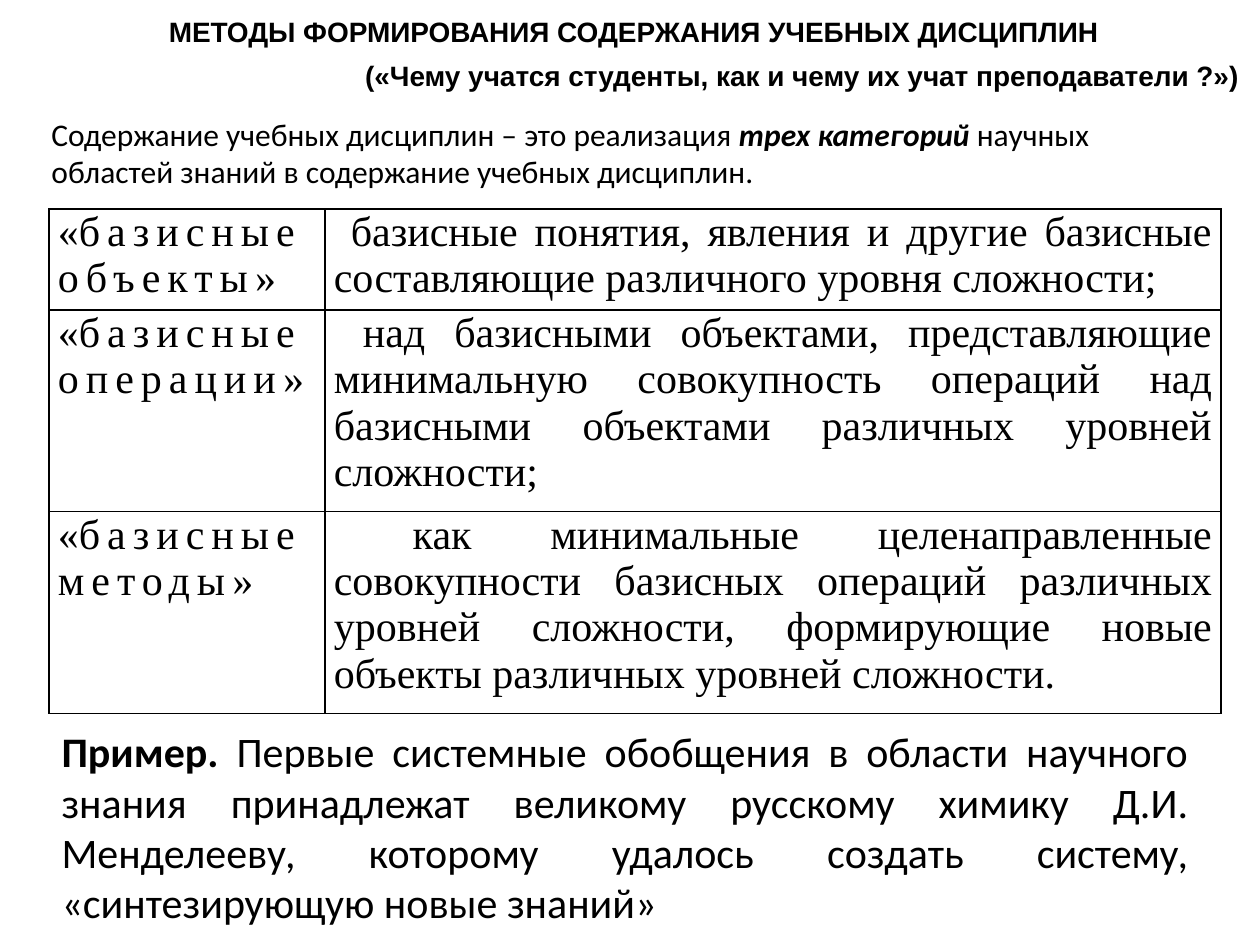
from lxml import etree
from pptx import Presentation
from pptx.dml.color import RGBColor
from pptx.enum.text import MSO_ANCHOR, PP_ALIGN
from pptx.oxml.ns import qn
from pptx.util import Inches, Pt

TOP, MIDDLE = MSO_ANCHOR.TOP, MSO_ANCHOR.MIDDLE
LEFT, CENTER, JUSTIFY = PP_ALIGN.LEFT, PP_ALIGN.CENTER, PP_ALIGN.JUSTIFY
BLACK = "000000"
TITLE_LAYOUT = 5
COLUMN_WIDTHS = (2.19, 7.11)
ROW_HEIGHTS = (0.8, 1.6, 1.6)
CATEGORIES = (
    ("базисные объекты",
     " базисные понятия, явления и другие базисные составляющие различного уровня сложности;"),
    ("базисные операции",
     " над базисными объектами, представляющие минимальную совокупность операций "
     "над базисными объектами различных уровней сложности;"),
    ("базисные методы",
     " как минимальные целенаправленные совокупности базисных операций различных уровней "
     "сложности, формирующие новые объекты различных уровней сложности."),
)


def color(hex_value):
    return RGBColor.from_string(hex_value)


def add_run(paragraph, text, font="Calibri", size=18, bold=False, italic=False, spacing=0):
    """Append formatted text; spacing is the letter spacing in points."""
    run = paragraph.add_run()
    run.text = text
    run.font.name = font
    run.font.size = Pt(size)
    run.font.bold = bold
    run.font.italic = italic
    run.font.color.rgb = color(BLACK)
    if spacing:
        run.font._element.set("spc", str(spacing * 100))


def prepare_text(shape, anchor=TOP, align=LEFT, indent=0):
    """Set up the text frame of a shape and return its first paragraph."""
    frame = shape.text_frame
    frame.word_wrap = True
    frame.vertical_anchor = anchor
    frame.margin_left = frame.margin_right = Inches(0.1)
    frame.margin_top = frame.margin_bottom = Inches(0.05)
    paragraph = frame.paragraphs[0]
    paragraph.alignment = align
    if indent:
        paragraph._p.get_or_add_pPr().set("indent", str(Inches(indent)))
    return paragraph


def add_text(slide, left, top, width, height, **layout):
    box = slide.shapes.add_textbox(Inches(left), Inches(top), Inches(width), Inches(height))
    return prepare_text(box, **layout)


def set_title(slide, text):
    title = slide.shapes.title
    title.left, title.top = Inches(0), Inches(0.06)
    title.width, title.height = Inches(9.84), Inches(0.37)
    paragraph = prepare_text(title, anchor=MIDDLE, align=CENTER, indent=0.22)
    add_run(paragraph, text, font="Arial", size=16, bold=True)


def add_borders(cell):
    properties = cell._tc.get_or_add_tcPr()
    for side in ("a:lnL", "a:lnR", "a:lnT", "a:lnB"):
        line = etree.SubElement(properties, qn(side), w=str(Pt(1)))
        fill = etree.SubElement(line, qn("a:solidFill"))
        etree.SubElement(fill, qn("a:srgbClr"), val=BLACK)


def format_cell(cell):
    """Style a table cell and return its paragraph."""
    add_borders(cell)
    cell.fill.background()
    cell.margin_left = cell.margin_right = Inches(0.07)
    cell.margin_top = cell.margin_bottom = 0
    paragraph = cell.text_frame.paragraphs[0]
    paragraph.alignment = JUSTIFY
    return paragraph


def add_category_table(slide):
    table = slide.shapes.add_table(
        len(CATEGORIES), len(COLUMN_WIDTHS), Inches(0.39), Inches(1.66),
        Inches(sum(COLUMN_WIDTHS)), Inches(sum(ROW_HEIGHTS))).table
    table.first_row = table.horz_banding = False
    for column, width in zip(table.columns, COLUMN_WIDTHS):
        column.width = Inches(width)
    style = {"font": "Times New Roman", "size": 24}
    for row, height, (category, meaning) in zip(table.rows, ROW_HEIGHTS, CATEGORIES):
        row.height = Inches(height)
        name_cell, meaning_cell = row.cells
        name = format_cell(name_cell)
        add_run(name, "«", **style)
        add_run(name, category, spacing=4, **style)
        add_run(name, "»", **style)
        add_run(format_cell(meaning_cell), meaning, **style)


def main():
    presentation = Presentation()
    presentation.slide_width, presentation.slide_height = Inches(10), Inches(7.5)
    slide = presentation.slides.add_slide(presentation.slide_layouts[TITLE_LAYOUT])

    set_title(slide, "МЕТОДЫ ФОРМИРОВАНИЯ СОДЕРЖАНИЯ УЧЕБНЫХ ДИСЦИПЛИН")
    subtitle = add_text(slide, 2.58, 0.41, 7.5, 0.37, anchor=MIDDLE, indent=0.22)
    add_run(subtitle, "(«Чему учатся студенты, как и чему их учат преподаватели ?»)",
            font="Arial", size=16, bold=True)

    definition = add_text(slide, 0.31, 0.86, 9.45, 0.71)
    add_run(definition, "Содержание учебных дисциплин – это реализация ")
    add_run(definition, "трех категорий", bold=True, italic=True)
    add_run(definition, " научных областей знаний в содержание учебных дисциплин.")

    add_category_table(slide)

    example = add_text(slide, 0.39, 5.71, 9.14, 1.72, align=JUSTIFY)
    add_run(example, "Пример.", size=24, bold=True)
    add_run(example, " Первые системные обобщения в области научного знания принадлежат "
            "великому русскому химику Д.И. Менделееву, которому удалось создать систему, "
            "«синтезирующую новые знаний»", size=24)

    presentation.save("out.pptx")


if __name__ == "__main__":
    main()
